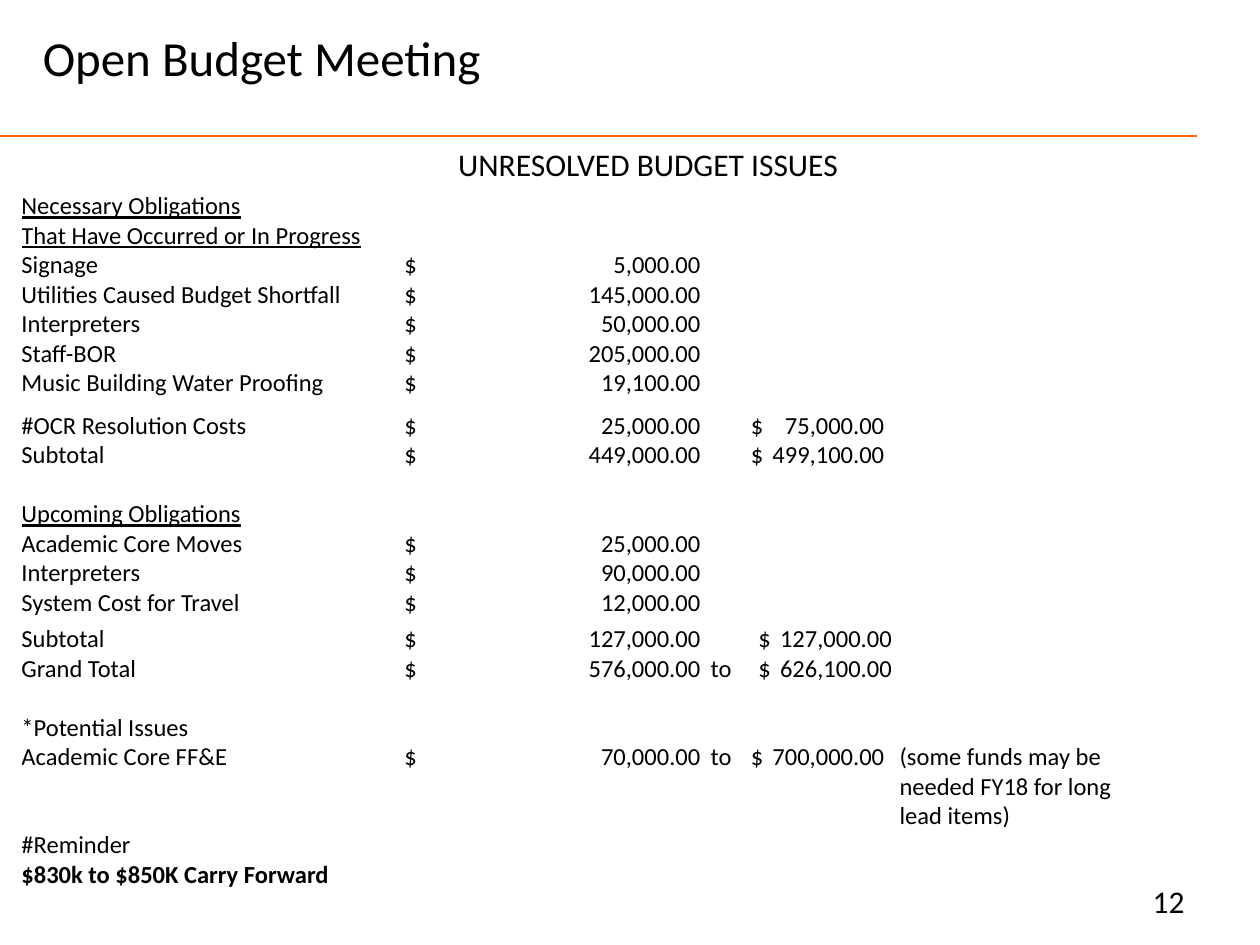
from lxml import etree
from pptx import Presentation, util as u
from pptx.dml.color import RGBColor
from pptx.enum import shapes, text
from pptx.oxml.ns import qn

BLACK = RGBColor(0, 0, 0)
WHITE = RGBColor(255, 255, 255)
ORANGE = RGBColor(255, 102, 0)
GRID = u.Inches(0.1)
WIDE, HIGH = 100, 75
LEFT, RIGHT = text.PP_ALIGN.LEFT, text.PP_ALIGN.RIGHT
COLS = (30, 24.1, 3.4, 12.2, 18.6)
ROW = 1.8
TALL = {7: 3.4, 14: 2.9}
INSETS = (0, 0.4, 0.6, 0.4, 0)
STOPS = {1: 23.5, 3: 10.6}
SHIFT = {(14, 3): 0.6, (15, 3): 0.6}
HEADS = {0, 1, 10}
BOLD = 22
ROWS = (
    ("Necessary Obligations",),
    ("That Have Occurred or In Progress",),
    ("Signage", 5000),
    ("Utilities Caused Budget Shortfall", 145000),
    ("Interpreters", 50000),
    ("Staff-BOR", 205000),
    ("Music Building Water Proofing", 19100),
    ("#OCR Resolution Costs", 25000, "", 75000),
    ("Subtotal", 449000, "", 499100),
    (),
    ("Upcoming Obligations",),
    ("Academic Core Moves", 25000),
    ("Interpreters", 90000),
    ("System Cost for Travel", 12000),
    ("Subtotal", 127000, "", 127000),
    ("Grand Total", 576000, "to", 626100),
    (),
    ("*Potential Issues",),
    ("Academic Core FF&E", 70000, "to", 700000, "(some funds may be"),
    ("", "", "", "", "needed FY18 for long"),
    ("", "", "", "", "lead items)"),
    ("#Reminder",),
    ("$830k to $850K Carry Forward",),
)


def span(n):
    """Turn grid units into a length."""
    return u.Emu(round(n * GRID))


def style(item, **values):
    """Set each named value on an item."""
    for name, value in values.items():
        setattr(item, name, value)


def write(para, words, size, **extra):
    """Add one styled run to a paragraph."""
    run = para.add_run()
    run.text = words
    style(run.font, name="Calibri", size=u.Pt(size), **extra)
    run.font.color.rgb = BLACK


def label(slide, box, words, size, align, inset=1):
    """Place a line of text in a box."""
    frame = slide.shapes.add_textbox(*map(span, box)).text_frame
    style(frame, word_wrap=True, margin_left=span(inset),
          vertical_anchor=text.MSO_ANCHOR.TOP)
    para = frame.paragraphs[0]
    para.alignment = align
    write(para, words, size)


def rule(slide, box):
    """Draw the orange line along the top of a box."""
    x, y, w, h = box
    line = slide.shapes.add_connector(
        shapes.MSO_CONNECTOR.STRAIGHT, *map(span, (x, y, x + w, y)))
    line.line.color.rgb = ORANGE
    line.line.width = u.Pt(1.5)
    etree.SubElement(line._element.spPr, qn("a:effectLst"))


def stop(para, place):
    """Add a right tab stop to a paragraph."""
    tabs = etree.SubElement(para._p.get_or_add_pPr(), qn("a:tabLst"))
    etree.SubElement(tabs, qn("a:tab"), pos=str(span(place)), algn="r")


def fill(cell, value, row, col):
    """Format one cell and write its value."""
    cell.fill.solid()
    cell.fill.fore_color.rgb = WHITE
    inset = INSETS[col] + SHIFT.get((row, col), 0)
    style(cell, margin_left=span(inset), margin_right=0, margin_top=0,
          margin_bottom=0, vertical_anchor=text.MSO_ANCHOR.BOTTOM)
    para = cell.text_frame.paragraphs[0]
    if value == "":
        para._p.get_or_add_endParaRPr().set("sz", "1400")
        return
    if isinstance(value, int):
        stop(para, STOPS[col])
        value = f"$\t{value:,.2f}"
    write(para, value, 14, underline=row in HEADS, bold=row == BOLD)


def budget(slide, box):
    """Place the table of obligations in a box."""
    grid = slide.shapes.add_table(len(ROWS), len(COLS), *map(span, box)).table
    style(grid, first_row=False, horz_banding=False)
    for col, wide in zip(grid.columns, COLS):
        col.width = span(wide)
    for r, data in enumerate(ROWS):
        grid.rows[r].height = span(TALL.get(r, ROW))
        for c in range(len(COLS)):
            fill(grid.cell(r, c), data[c] if c < len(data) else "", r, c)


def main():
    """Build and save the slide."""
    deck = Presentation()
    style(deck, slide_width=span(WIDE), slide_height=span(HIGH))
    slide = deck.slides.add_slide(deck.slide_layouts[6])
    rule(slide, (0, 10.8, 95, 0))
    label(slide, (71.7, 69.5, 23.3, 4), "12", 18, RIGHT)
    label(slide, (0, 1.7, 55, 7.5), "Open Budget Meeting", 28, LEFT, 3.4)
    budget(slide, (1.7, 15.2, sum(COLS), 56))
    label(slide, (24.2, 11, 43.3, 4), "UNRESOLVED BUDGET ISSUES", 18, RIGHT)
    deck.save("out.pptx")


if __name__ == "__main__":
    main()
